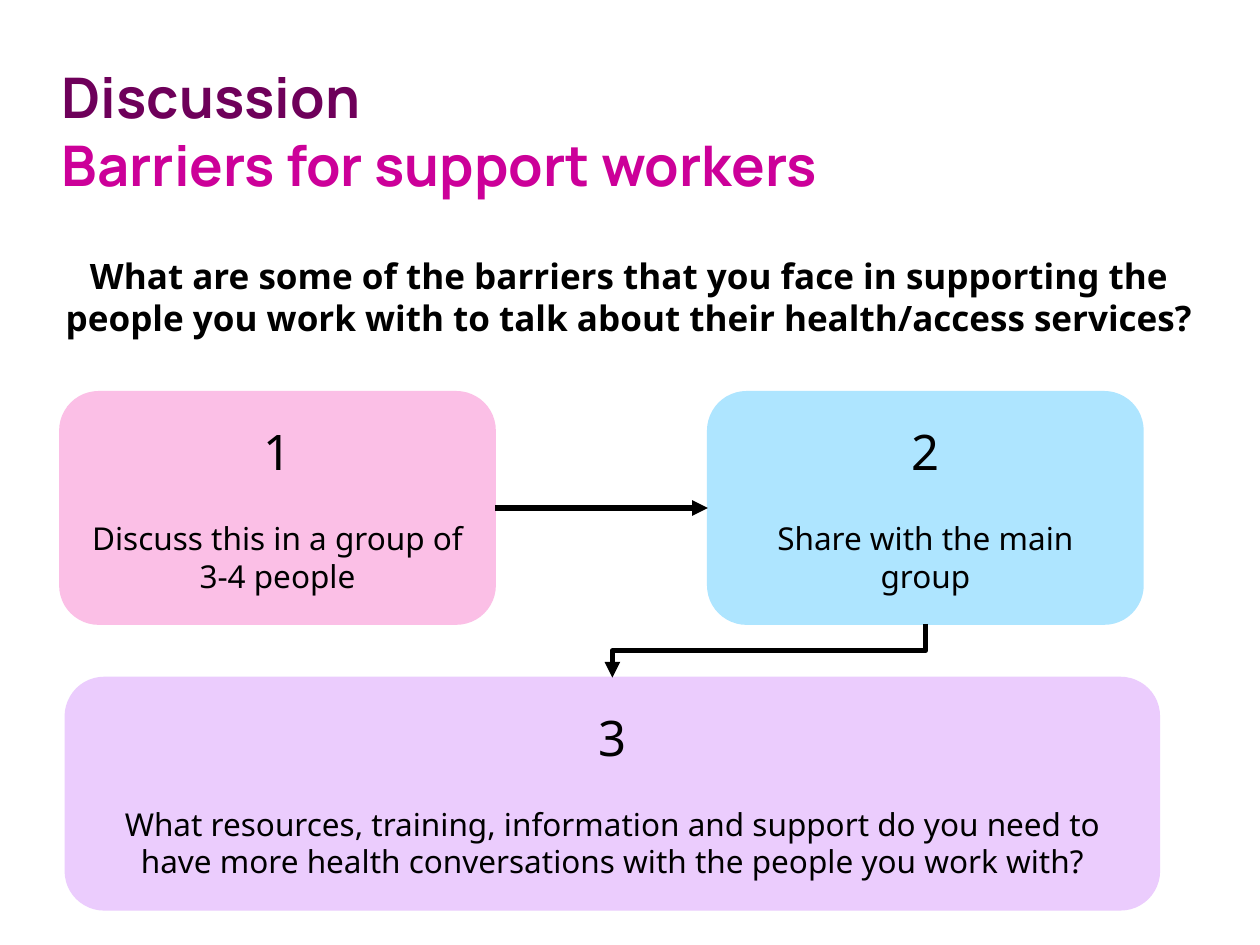
from dataclasses import dataclass

from lxml import etree
from pptx import Presentation
from pptx import util as u
from pptx.dml.color import RGBColor
from pptx.enum import shapes, text
from pptx.oxml.ns import qn

PLUM = RGBColor(0x6E, 0x00, 0x5A)
MAGENTA = RGBColor(0xCC, 0x00, 0x99)
BLACK = RGBColor(0x00, 0x00, 0x00)
PINK = RGBColor(0xFB, 0xBF, 0xE6)
SKY = RGBColor(0xAE, 0xE5, 0xFF)
LILAC = RGBColor(0xEB, 0xCC, 0xFD)

HEADING_FONT = "Manrope"
BODY_FONT = "Noto Sans"
STEP_HEIGHT = 4.68
TOP_ROW = 7.9
RIGHT, LEFT = 3, 1


@dataclass
class Step:
    number: str
    task: str
    left: float
    top: float
    width: float
    colour: RGBColor


STEPS = [
    Step("1", "Discuss this in a group of 3-4 people", 1.21, TOP_ROW, 8.77, PINK),
    Step("2", "Share with the main group", 14.27, TOP_ROW, 8.77, SKY),
    Step("3", "What resources, training, information and support do you need to "
         "have more health conversations with the people you work with?",
         1.32, 13.66, 22.05, LILAC),
]


def add_heading(slide) -> None:
    title = slide.shapes.title
    title.left, title.top = u.Cm(0.99), u.Cm(1.14)
    title.width, title.height = u.Cm(19.76), u.Cm(4.37)
    frame = title.text_frame
    frame.vertical_anchor = text.MSO_ANCHOR.TOP
    frame.word_wrap = True
    heading = frame.paragraphs[0]
    heading.alignment = text.PP_ALIGN.LEFT
    heading.font.name, heading.font.size = HEADING_FONT, u.Pt(32)
    heading.font.bold = True
    topic = heading.add_run()
    topic.text = "Discussion"
    topic.font.color.rgb = PLUM
    heading.add_line_break()
    subject = heading.add_run()
    subject.text = "Barriers for support workers"
    subject.font.color.rgb = MAGENTA


def write_centred(paragraph, words: str, size: int) -> None:
    paragraph.text = words
    paragraph.alignment = text.PP_ALIGN.CENTER
    paragraph.font.name, paragraph.font.size = BODY_FONT, u.Pt(size)
    paragraph.font.color.rgb = BLACK


def add_question(slide) -> None:
    box = slide.shapes.add_textbox(u.Cm(0.48), u.Cm(5.0), u.Cm(24.41), u.Cm(2))
    box.text_frame.word_wrap = True
    question = box.text_frame.paragraphs[0]
    write_centred(question, "What are some of the barriers that you face in supporting "
                  "the people you work with to talk about their health/access services?", 20)
    question.font.bold = True


def add_step(slide, step: Step):
    card = slide.shapes.add_shape(
        shapes.MSO_SHAPE.ROUNDED_RECTANGLE, u.Cm(step.left), u.Cm(step.top),
        u.Cm(step.width), u.Cm(STEP_HEIGHT))
    card.shadow.inherit = False
    card.fill.solid()
    card.fill.fore_color.rgb = step.colour
    card.line.color.rgb = step.colour
    card.line.width = u.Pt(1)
    frame = card.text_frame
    frame.word_wrap = True
    frame.vertical_anchor = text.MSO_ANCHOR.MIDDLE
    write_centred(frame.paragraphs[0], step.number, 28)
    task = frame.add_paragraph()
    write_centred(task, step.task, 18)
    task.space_before = u.Pt(22)
    return card


def style_arrow(arrow) -> None:
    arrow.line.color.rgb = BLACK
    arrow.line.width = u.Pt(3)
    etree.SubElement(arrow.line._get_or_add_ln(), qn("a:tailEnd"), type="triangle")
    etree.SubElement(arrow._element.spPr, qn("a:effectLst"))


def add_side_arrow(slide, source, target) -> None:
    arrow = slide.shapes.add_connector(shapes.MSO_CONNECTOR.STRAIGHT, 0, 0, 0, 0)
    arrow.begin_connect(source, RIGHT)
    arrow.end_connect(target, LEFT)
    style_arrow(arrow)


def add_down_arrow(slide, source, target) -> None:
    """Elbow from the source's bottom to the target's top, turned a quarter circle."""
    start_x, start_y = source.left + source.width // 2, source.top + source.height
    end_x, end_y = target.left + target.width // 2, target.top
    middle_x, middle_y = (start_x + end_x) // 2, (start_y + end_y) // 2
    half_drop, half_run = (end_y - start_y) // 2, (start_x - end_x) // 2
    arrow = slide.shapes.add_connector(
        shapes.MSO_CONNECTOR.ELBOW, middle_x - half_drop, middle_y - half_run,
        middle_x + half_drop, middle_y + half_run)
    arrow._element.spPr.find(qn("a:xfrm")).set("rot", str(90 * 60000))
    style_arrow(arrow)


def main() -> None:
    deck = Presentation()
    deck.slide_width, deck.slide_height = u.Cm(25.4), u.Cm(19.05)
    slide = deck.slides.add_slide(deck.slide_layouts.get_by_name("Title Only"))
    add_heading(slide)
    add_question(slide)
    discuss, share, resources = [add_step(slide, step) for step in STEPS]
    add_side_arrow(slide, discuss, share)
    add_down_arrow(slide, share, resources)
    deck.save("out.pptx")


if __name__ == "__main__":
    main()
